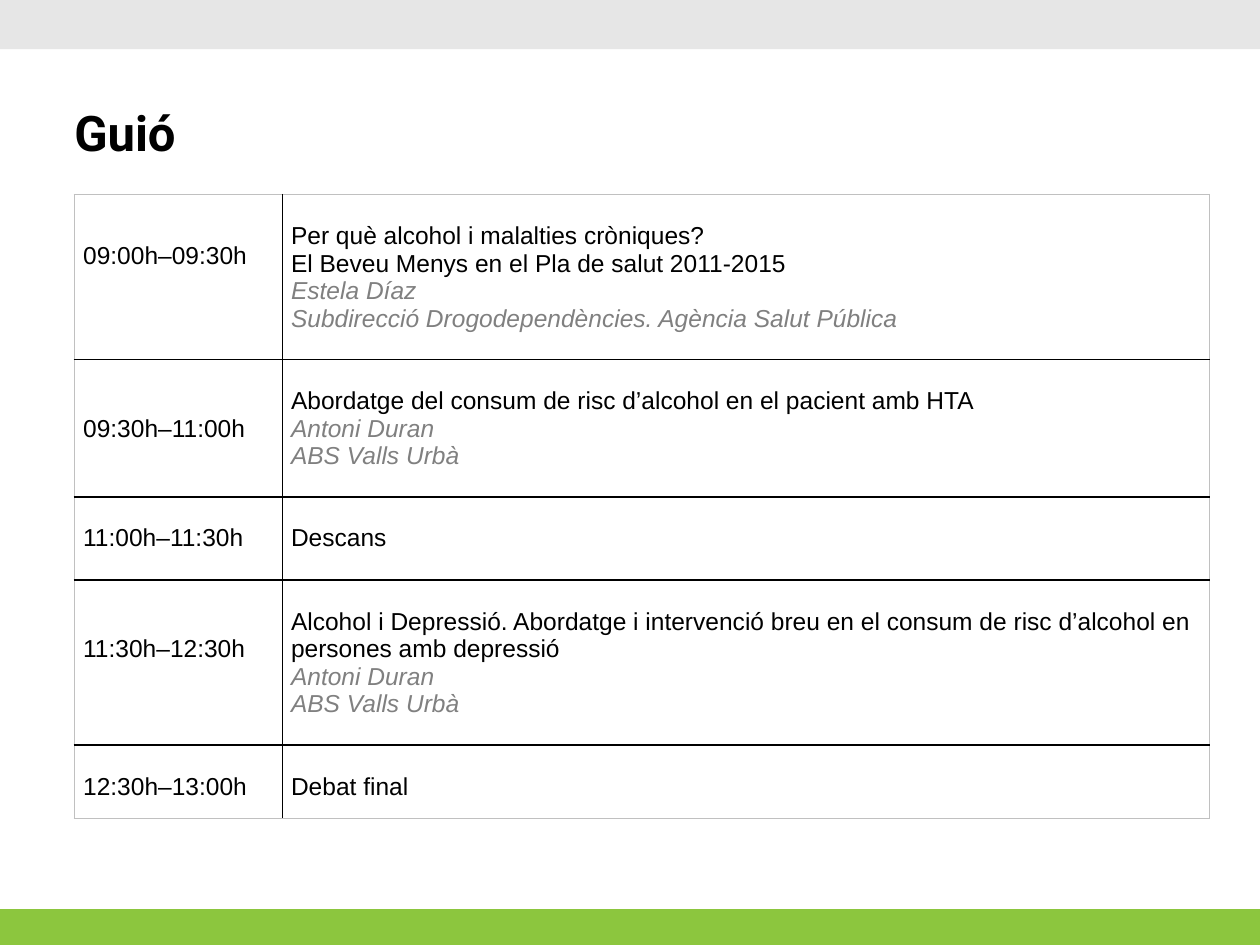
from lxml import etree
from pptx import Presentation, util as u
from pptx.dml.color import RGBColor
from pptx.enum import shapes, text
from pptx.oxml import ns

BLACK = RGBColor(0x00, 0x00, 0x00)
GREY = RGBColor(0x80, 0x80, 0x80)
EDGE = RGBColor(0xC0, 0xC0, 0xC0)
PALE = RGBColor(0xE6, 0xE6, 0xE6)
GREEN = RGBColor(0x8C, 0xC6, 0x3E)

WIDE, HIGH = u.Inches(10), u.Inches(7.5)
LINE = 0.22  # one line of table text, in inches
COLS = (1.65, 7.36)

# Row height, lines above the time, time, topics, speaker and place
PLAN = [
    (1.31, 1.7, "09:00h–09:30h",
     ["Per què alcohol i malalties cròniques?",
      "El Beveu Menys en el Pla de salut 2011-2015"],
     ["Estela Díaz", "Subdirecció Drogodependències. Agència Salut Pública"]),
    (1.09, 2, "09:30h–11:00h",
     ["Abordatge del consum de risc d’alcohol en el pacient amb HTA"],
     ["Antoni Duran", "ABS Valls Urbà"]),
    (0.66, 1, "11:00h–11:30h", ["Descans"], []),
    (1.31, 2, "11:30h–12:30h",
     ["Alcohol i Depressió. Abordatge i intervenció breu en el consum "
      "de risc d’alcohol en persones amb depressió"],
     ["Antoni Duran", "ABS Valls Urbà"]),
    (0.58, 1, "12:30h–13:00h", ["Debat final"], []),
]


def share(x, y, w, h):
    """Turn shares of the slide into a box."""
    return int(x * WIDE), int(y * HIGH), int(w * WIDE), int(h * HIGH)


def write(frame, words, first=True, size=14, face="Arial", color=BLACK,
          bold=False, slant=False, lead=None):
    """Put one paragraph into a text frame."""
    para = frame.paragraphs[0] if first else frame.add_paragraph()
    para.line_spacing = lead
    run = para.add_run()
    run.text = words
    font = run.font
    font.size, font.name = u.Pt(size), face
    font.bold, font.italic = bold, slant
    font.color.rgb = color


def band(slide, box, color):
    bar = slide.shapes.add_shape(shapes.MSO_SHAPE.RECTANGLE, *box)
    bar.shadow.inherit = False
    bar.fill.solid()
    bar.fill.fore_color.rgb = color
    bar.line.fill.background()


def title(slide, box, words):
    frame = slide.shapes.add_textbox(*box).text_frame
    frame.word_wrap = True
    frame.vertical_anchor = text.MSO_ANCHOR.MIDDLE
    frame.margin_left = frame.margin_right = 0
    frame.margin_top = frame.margin_bottom = 0
    write(frame, words, size=28, face="Roboto", bold=True, lead=u.Pt(28))


def border(cell, row, col):
    """Black lines inside the table, grey ones around it."""
    props = cell._tc.get_or_add_tcPr()
    outer = {"L": col == 0, "R": col == len(COLS) - 1,
             "T": row == 0, "B": row == len(PLAN) - 1}
    for side, edge in outer.items():
        line = etree.SubElement(props, ns.qn("a:ln" + side), w=str(u.Pt(1)))
        fill = etree.SubElement(line, ns.qn("a:solidFill"))
        etree.SubElement(fill, ns.qn("a:srgbClr"),
                         val=str(EDGE if edge else BLACK))


def agenda(slide, box):
    table = slide.shapes.add_table(len(PLAN), len(COLS), *box).table
    table.first_row = table.horz_banding = False
    for col, width in zip(table.columns, COLS):
        col.width = u.Inches(width)
    for row, (tall, skip, time, topics, people) in enumerate(PLAN):
        table.rows[row].height = u.Inches(tall)
        for col, gap in enumerate((skip, 1)):
            cell = table.cell(row, col)
            cell.margin_left = cell.margin_right = u.Inches(0.07)
            cell.margin_top, cell.margin_bottom = u.Inches(gap * LINE), 0
            border(cell, row, col)
            cell.fill.background()
        write(table.cell(row, 0).text_frame, time)
        frame = table.cell(row, 1).text_frame
        for i, topic in enumerate(topics):
            write(frame, topic, first=i == 0)
        for name in people:
            write(frame, name, first=False, color=GREY, slant=True)


def main():
    deck = Presentation()
    deck.slide_width, deck.slide_height = WIDE, HIGH
    slide = deck.slides.add_slide(deck.slide_layouts[6])
    # Bands at the foot and head
    band(slide, share(0, 0.962, 1, 0.038), GREEN)
    band(slide, share(0, 0, 1, 0.052), PALE)
    # Heading and timetable
    title(slide, share(0.059, 0.095, 0.85, 0.1), "Guió")
    agenda(slide, share(0.059, 0.206, 0.901, 0.66))
    deck.save("out.pptx")


if __name__ == "__main__":
    main()
